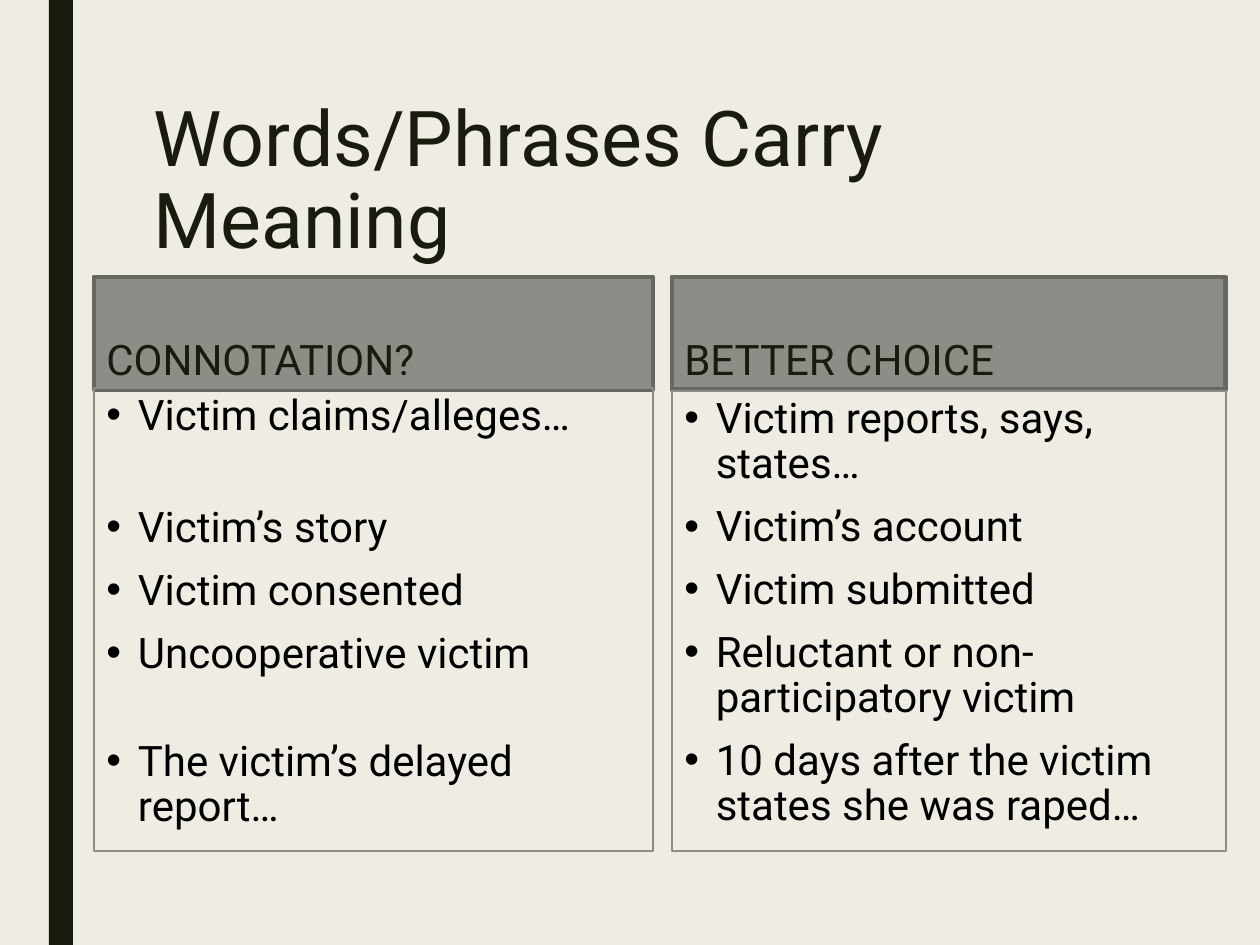
import pptx
import pptx.util
import pptx.dml.color
import pptx.enum.shapes
import pptx.enum.text
import pptx.oxml.ns
import lxml.etree

PX = 914400 // 126
FONT = "Roboto"
COLORS = {
    "background": "EFEDE3",
    "dark": "191B0E",
    "header": "8C8D86",
    "header_border": "686863",
    "bullets": "000000",
}
# Each column: left, width, header, list top, (bullet, points of space after it)
COLUMNS = [
    (94, 559, "CONNOTATION?", 388, [
        ("Victim claims/alleges…", 28),
        ("Victim’s story", 0),
        ("Victim consented", 0),
        ("Uncooperative victim", 26),
        ("The victim’s delayed report…", 0),
    ]),
    (672, 554, "BETTER CHOICE", 391, [
        ("Victim reports, says, states…", 0),
        ("Victim’s account", 0),
        ("Victim submitted", 0),
        ("Reluctant or non-participatory victim", 0),
        ("10 days after the victim states she was raped…", 0),
    ]),
]
HEADER_TOP, HEADER_HEIGHT, LIST_BOTTOM = 277, 113, 851


def rgb(name):
    return pptx.dml.color.RGBColor.from_string(COLORS[name])


def add_rectangle(slide, box, fill=None, border=None, border_pt=0.75):
    rectangle = slide.shapes.add_shape(
        pptx.enum.shapes.MSO_SHAPE.RECTANGLE, *(n * PX for n in box))
    rectangle.shadow.inherit = False
    if fill:
        rectangle.fill.solid()
        rectangle.fill.fore_color.rgb = rgb(fill)
    else:
        rectangle.fill.background()
    if border:
        rectangle.line.color.rgb = rgb(border)
        rectangle.line.width = pptx.util.Pt(border_pt)
    else:
        rectangle.line.fill.background()
    return rectangle


def format_paragraph(paragraph, size, color, line_spacing):
    paragraph.alignment = pptx.enum.text.PP_ALIGN.LEFT
    paragraph.line_spacing = line_spacing
    paragraph.font.name = FONT
    paragraph.font.size = pptx.util.Pt(size)
    paragraph.font.color.rgb = rgb(color)


def add_bullet(paragraph):
    """Give the paragraph a round bullet with a quarter-inch hanging indent."""
    properties = paragraph._p.get_or_add_pPr()
    indent = pptx.util.Inches(0.25)
    properties.set("marL", str(indent))
    properties.set("indent", str(-indent))
    for tag, key, value in (("a:buFont", "typeface", "Arial"),
                            ("a:buChar", "char", "•")):
        lxml.etree.SubElement(
            properties, pptx.oxml.ns.qn(tag)).set(key, value)


def place_title(slide, box):
    title = slide.shapes.title
    title.left, title.top, title.width, title.height = (n * PX for n in box)
    frame = title.text_frame
    frame.text = "Words/Phrases Carry Meaning"
    frame.word_wrap = True
    frame.auto_size = pptx.enum.text.MSO_AUTO_SIZE.NONE
    frame.vertical_anchor = pptx.enum.text.MSO_ANCHOR.TOP
    format_paragraph(frame.paragraphs[0], 44, "dark", 0.89)


def add_header(slide, box, text):
    header = add_rectangle(slide, box, "header", "header_border", 2.75)
    frame = header.text_frame
    frame.text = text
    frame.word_wrap = True
    frame.vertical_anchor = pptx.enum.text.MSO_ANCHOR.BOTTOM
    format_paragraph(frame.paragraphs[0], 24, "dark", 0.84)


def add_bullet_list(slide, box, bullets):
    frame = add_rectangle(slide, box, border="header").text_frame
    frame.word_wrap = True
    frame.vertical_anchor = pptx.enum.text.MSO_ANCHOR.TOP
    frame.text = "\n".join(text for text, _ in bullets)
    for paragraph, (_, space_after) in zip(frame.paragraphs, bullets):
        format_paragraph(paragraph, 24, "bullets", 0.9)
        paragraph.space_before = pptx.util.Pt(10)
        paragraph.space_after = pptx.util.Pt(space_after)
        add_bullet(paragraph)


def main():
    presentation = pptx.Presentation()
    presentation.slide_width = pptx.util.Inches(10)
    presentation.slide_height = pptx.util.Inches(7.5)
    slide = presentation.slides.add_slide(presentation.slide_layouts[5])
    slide.background.fill.solid()
    slide.background.fill.fore_color.rgb = rgb("background")

    add_rectangle(slide, (49, 0, 24, 945), "dark")
    place_title(slide, (141, 94, 1057, 204))
    for left, width, heading, list_top, bullets in COLUMNS:
        add_header(slide, (left, HEADER_TOP, width, HEADER_HEIGHT), heading)
        add_bullet_list(
            slide, (left, list_top, width, LIST_BOTTOM - list_top), bullets)
    presentation.save("out.pptx")


if __name__ == "__main__":
    main()
